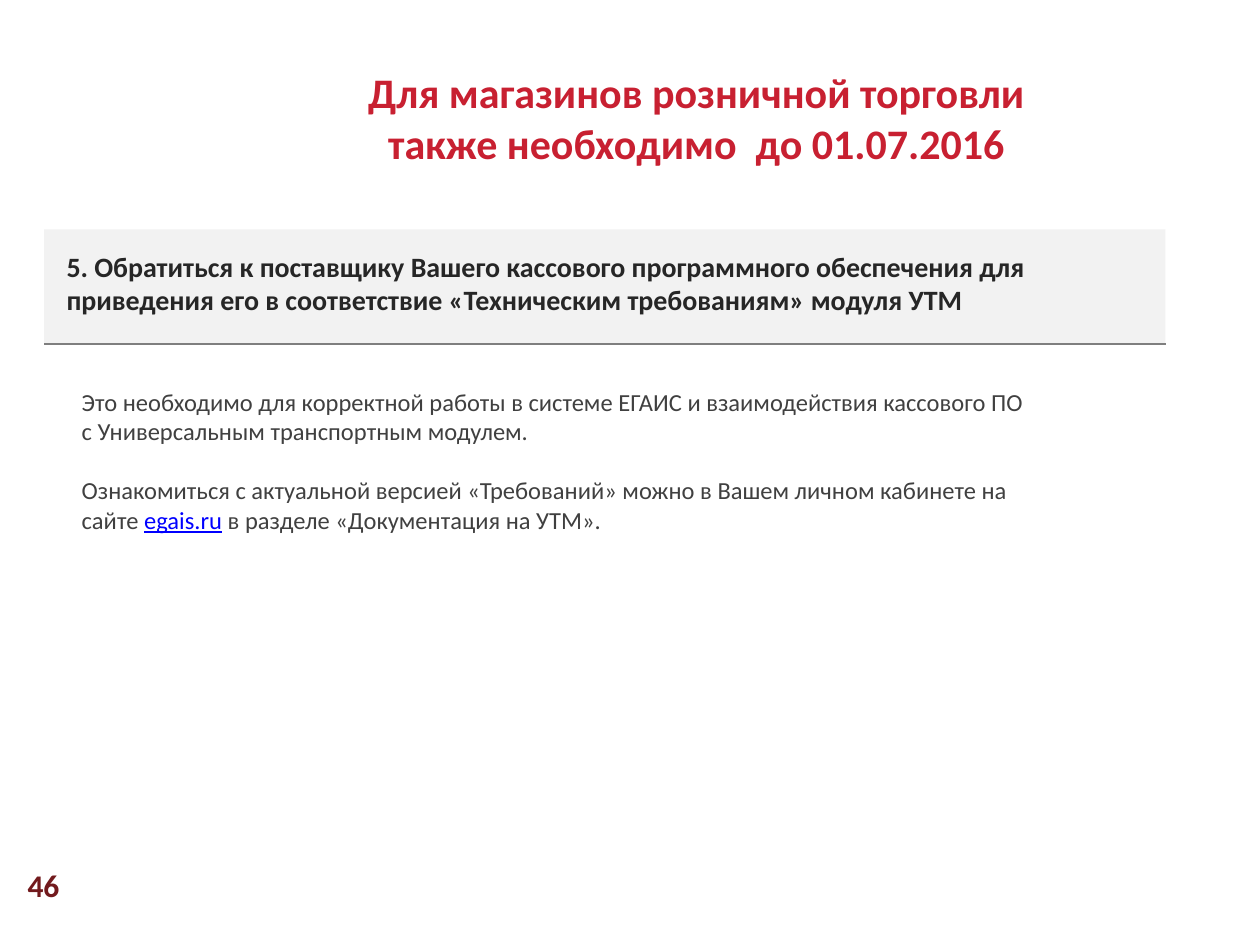
from lxml import etree
from pptx import Presentation
from pptx.dml.color import RGBColor
from pptx.enum.shapes import MSO_CONNECTOR, MSO_SHAPE
from pptx.enum.text import MSO_ANCHOR, PP_ALIGN
from pptx.oxml.ns import qn
from pptx.util import Inches, Pt

STRAIGHT = MSO_CONNECTOR.STRAIGHT
RECTANGLE = MSO_SHAPE.RECTANGLE
TOP, MIDDLE = MSO_ANCHOR.TOP, MSO_ANCHOR.MIDDLE
LEFT, CENTER = PP_ALIGN.LEFT, PP_ALIGN.CENTER

FONT = "Calibri"
COLORS = {
    "band": "F2F2F2",
    "rule": "7F7F7F",
    "title": "C82031",
    "step": "262626",
    "body": "404040",
    "link": "0000FF",
    "number": "721A1D",
}

# Content: each paragraph is a list of (text, color name) runs
TITLE = [
    [("Для магазинов розничной торговли ", "title")],
    [("также необходимо  до 01.07.2016 ", "title")],
]
STEP = [[(
    "5. Обратиться к поставщику Вашего кассового программного обеспечения для "
    "приведения его в соответствие «Техническим требованиям» модуля УТМ", "step")]]
BODY = [
    [("Это необходимо для корректной работы в системе ЕГАИС и взаимодействия кассового ПО", "body")],
    [("с Универсальным транспортным модулем.", "body")],
    [
        ("Ознакомиться с актуальной версией «Требований» можно в Вашем личном кабинете на сайте ", "body"),
        ("egais.ru", "link"),
        (" в разделе «Документация на УТМ».", "body"),
    ],
]
PAGE_NUMBER = [[("46", "number")]]

# Layout in inches: left, top, width, height
BAND = (0.35, 1.82, 8.9, 0.91)
TITLE_BOX = (1.53, 0.48, 8.07, 0.91)
STEP_BOX = (0.43, 1.93, 8.66, 0.64)
BODY_BOX = (0.55, 3.02, 8, 1.28)
NUMBER_BOX = (0.12, 6.82, 0.62, 0.4)


def color(name):
    return RGBColor.from_string(COLORS[name])


def add_text(slide, box, paragraphs, size, bold=True, align=LEFT, anchor=TOP):
    frame = slide.shapes.add_textbox(*map(Inches, box)).text_frame
    frame.word_wrap = True
    frame.vertical_anchor = anchor
    for index, runs in enumerate(paragraphs):
        paragraph = frame.add_paragraph() if index else frame.paragraphs[0]
        paragraph.alignment = align
        for text, color_name in runs:
            run = paragraph.add_run()
            run.text = text
            run.font.name = FONT
            run.font.size = Pt(size)
            run.font.bold = bold
            run.font.underline = color_name == "link"
            run.font.color.rgb = color(color_name)
    return frame


presentation = Presentation()
presentation.slide_width = Inches(10)
presentation.slide_height = Inches(7.5)
slide = presentation.slides.add_slide(presentation.slide_layouts[6])

# Grey band behind the step
band = slide.shapes.add_shape(RECTANGLE, *map(Inches, BAND))
band.shadow.inherit = False
band.fill.solid()
band.fill.fore_color.rgb = color("band")
band.line.fill.background()

# Texts
add_text(slide, STEP_BOX, STEP, 16)
add_text(slide, TITLE_BOX, TITLE, 24, align=CENTER)
body = add_text(slide, BODY_BOX, BODY, 14, bold=False)
body.paragraphs[-1].space_before = Pt(17)

# Rule along the bottom edge of the band
left, top, width, height = BAND
bottom = Inches(top + height)
rule = slide.shapes.add_connector(STRAIGHT, Inches(left + width), bottom, Inches(left), bottom)
rule.line.color.rgb = color("rule")
rule.line.width = Pt(0.75)
etree.SubElement(rule._element.spPr, qn("a:effectLst"))

# Page number
add_text(slide, NUMBER_BOX, PAGE_NUMBER, 18, anchor=MIDDLE)

presentation.save("out.pptx")
